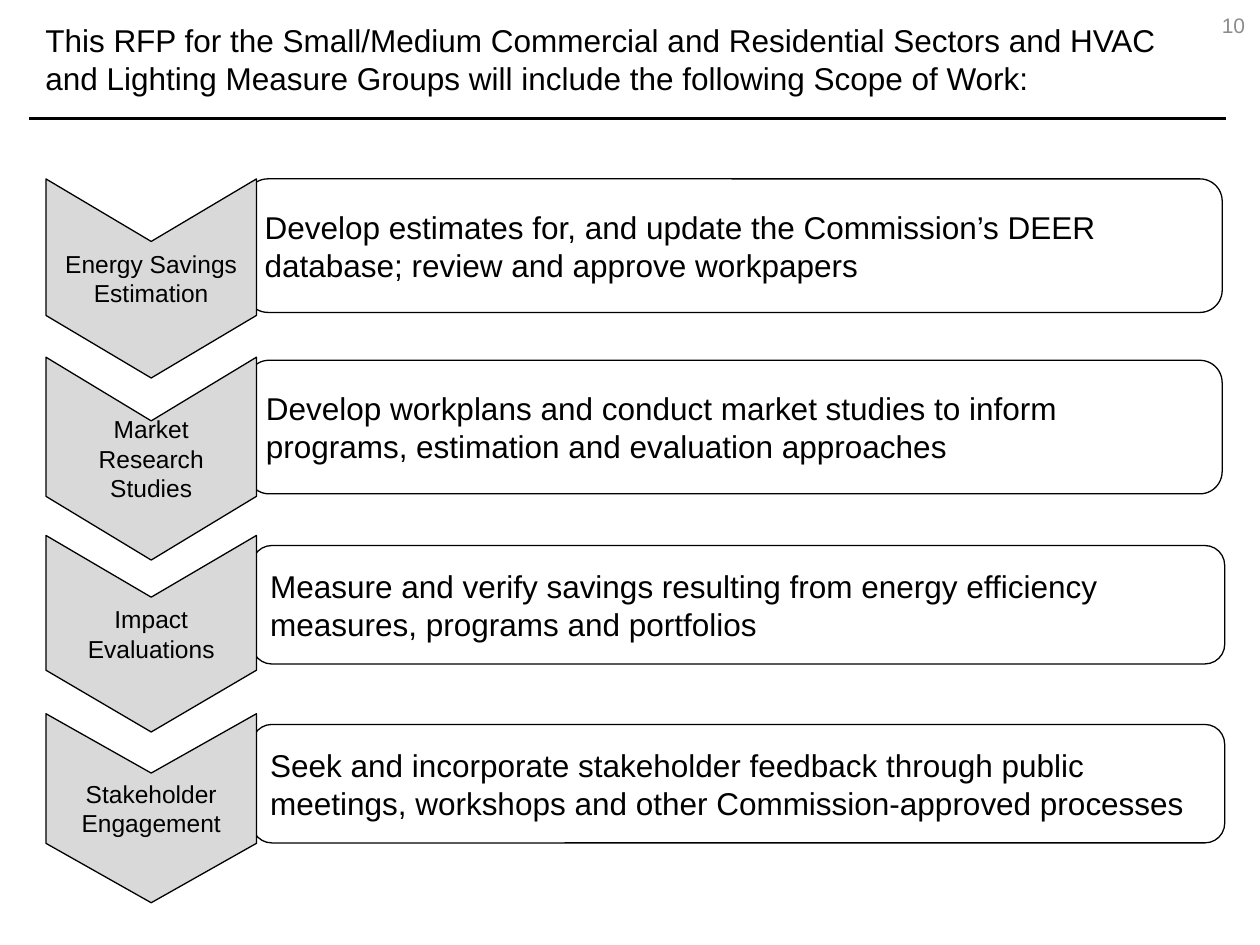
from pptx import Presentation
from pptx.dml.color import RGBColor
from pptx.enum.shapes import MSO_CONNECTOR, MSO_SHAPE
from pptx.enum.text import MSO_ANCHOR, MSO_AUTO_SIZE, PP_ALIGN
from pptx.oxml.ns import qn
from pptx.util import Inches, Pt
from lxml.etree import SubElement

BLACK = RGBColor(0x00, 0x00, 0x00)
GREY = RGBColor(0x8C, 0x8C, 0x8C)
PALE = RGBColor(0xD9, 0xD9, 0xD9)
FONT = "Arial"

TITLE = ("This RFP for the Small/Medium Commercial and Residential Sectors and HVAC "
         "and Lighting Measure Groups will include the following Scope of Work:")
PAGE = "10"

# Step name, chevron length, scope text, box (left, top, width, height)
STEPS = [
    ("Energy Savings Estimation", 1.58,
     "Develop estimates for, and update the Commission’s DEER database; "
     "review and approve workpapers", (1.95, 1.42, 7.75, 1.06)),
    ("Market Research Studies", 1.61,
     "Develop workplans and conduct market studies to inform programs, "
     "estimation and evaluation approaches", (1.96, 2.86, 7.74, 1.06)),
    ("Impact Evaluations", 1.56,
     "Measure and verify savings resulting from energy efficiency measures, "
     "programs and portfolios", (2, 4.33, 7.72, 0.94)),
    ("Stakeholder Engagement", 1.5,
     "Seek and incorporate stakeholder feedback through public meetings, "
     "workshops and other Commission-approved processes", (2, 5.75, 7.72, 0.94)),
]
MID, WIDE = 1.2, 1.67      # chevron centre line and breadth
TOP, PITCH = 1.42, 1.415   # first chevron top and step between tops


def write(shape, text, size, color=BLACK, align=PP_ALIGN.LEFT):
    frame = shape.text_frame
    frame.word_wrap = True
    frame.auto_size = MSO_AUTO_SIZE.NONE
    frame.vertical_anchor = MSO_ANCHOR.MIDDLE
    para = frame.paragraphs[0]
    para.alignment = align
    run = para.add_run()
    run.text = text
    run.font.name = FONT
    run.font.size = Pt(size)
    run.font.color.rgb = color
    return frame


def draw(slide, kind, spot, fill=None):
    shape = slide.shapes.add_shape(kind, *map(Inches, spot))
    shape.shadow.inherit = False
    if fill is None:
        shape.fill.background()
    else:
        shape.fill.solid()
        shape.fill.fore_color.rgb = fill
    shape.line.color.rgb = BLACK
    shape.line.width = Pt(0.75)
    return shape


deck = Presentation()
deck.slide_width, deck.slide_height = Inches(10), Inches(7.5)
slide = deck.slides.add_slide(deck.slide_layouts[5])

# Title and rule below it
title = slide.shapes.title
title.left, title.top, title.width, title.height = map(Inches, (0.26, 0, 9.45, 0.94))
write(title, TITLE, 18)
rule = slide.shapes.add_connector(
    MSO_CONNECTOR.STRAIGHT, *map(Inches, (0.23, 0.94, 9.73, 0.94)))
rule.line.color.rgb = BLACK
rule.line.width = Pt(2)
SubElement(rule.element.spPr, qn("a:effectLst"))

# Page number
page = slide.shapes.add_textbox(*map(Inches, (9.58, 0, 0.42, 0.4)))
write(page, PAGE, 12, GREY, PP_ALIGN.CENTER)

# Scope boxes, each with its chevron in front
for i, (name, size, scope, spot) in enumerate(STEPS):
    box = draw(slide, MSO_SHAPE.ROUNDED_RECTANGLE, spot)
    write(box, scope, 18)

    # The chevron is turned to point down, so its length runs vertically
    mid = TOP + i * PITCH + size / 2
    step = draw(slide, MSO_SHAPE.CHEVRON,
                (MID - size / 2, mid - WIDE / 2, size, WIDE), PALE)
    step.rotation = 90
    step.adjustments[0] = 0.314
    frame = write(step, name, 14, align=PP_ALIGN.CENTER)
    frame.margin_left = frame.margin_right = Inches(0.1)
    frame.margin_top = frame.margin_bottom = Inches(0.1)
    step.element.txBody.find(qn("a:bodyPr")).set("vert", "vert270")

deck.save("out.pptx")
